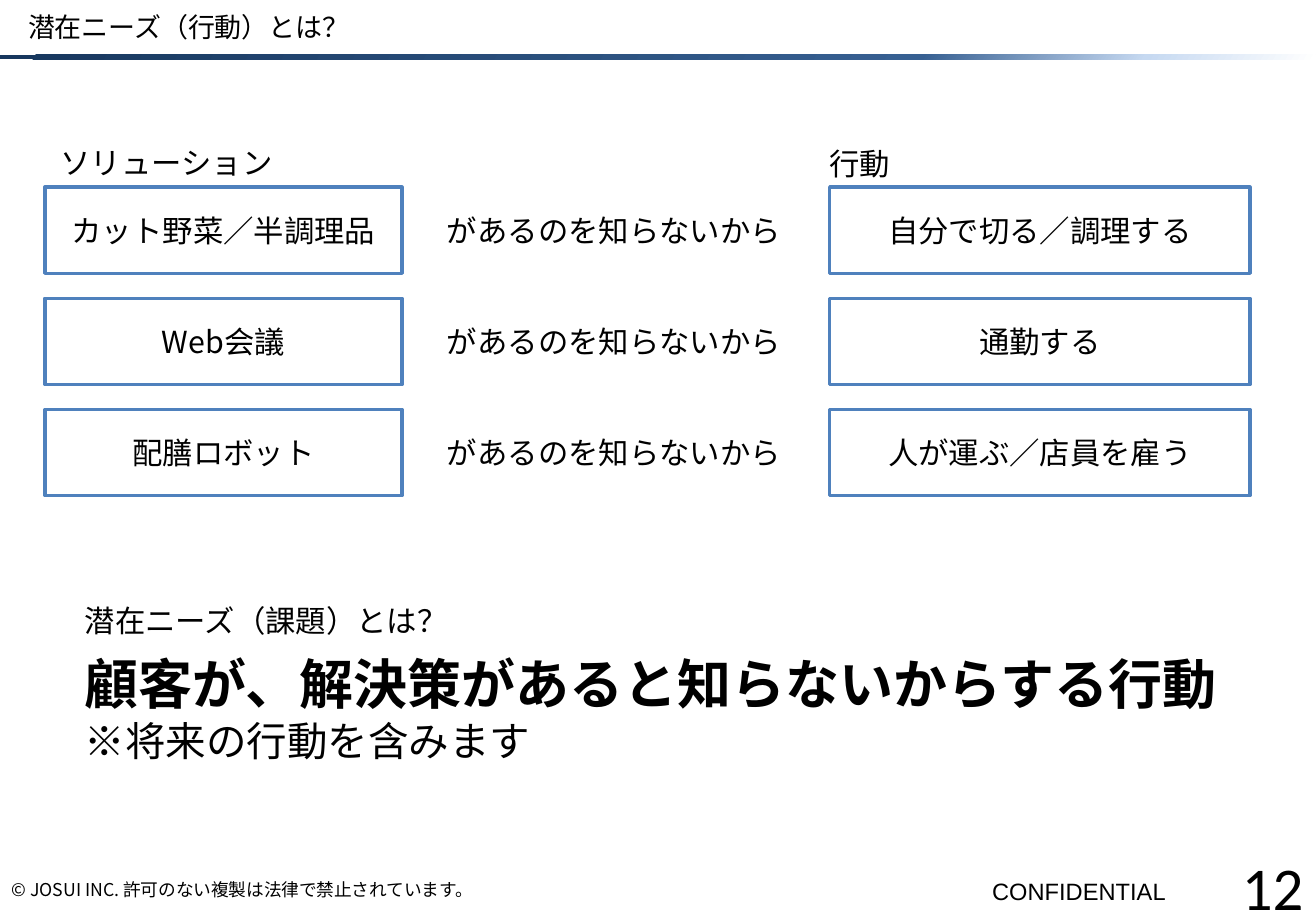
from copy import deepcopy
from lxml import etree
from pptx import Presentation
from pptx.dml.color import RGBColor
from pptx.enum.shapes import MSO_SHAPE
from pptx.enum.text import MSO_ANCHOR, MSO_AUTO_SIZE, PP_ALIGN
from pptx.oxml.ns import qn
from pptx.util import Pt

RECT = MSO_SHAPE.RECTANGLE
TOP, MIDDLE = MSO_ANCHOR.TOP, MSO_ANCHOR.MIDDLE
LEFT, CENTER, RIGHT = PP_ALIGN.LEFT, PP_ALIGN.CENTER, PP_ALIGN.RIGHT
NO_FIT = MSO_AUTO_SIZE.NONE

TITLE = "潜在ニーズ（行動）とは？"
HEADINGS = [("ソリューション", 28.8, 82.1, 141.8), ("行動", 484.6, 82.8, 51.1)]
REASON = "があるのを知らないから"
ROWS = [
    ("カット野菜／半調理品", "自分で切る／調理する"),
    ("Web会議", "通勤する"),
    ("配膳ロボット", "人が運ぶ／店員を雇う"),
]
QUESTION = "潜在ニーズ（課題）とは？"
ANSWER = "顧客が、解決策があると知らないからする行動"
NOTE = "※将来の行動を含みます"
COPYRIGHT = "© JOSUI INC. 許可のない複製は法律で禁止されています。"

FONT = "Noto Sans CJK JP"
COLORS = {"text": "000000", "box": "FFFFFF", "border": "4F81BD"}
BAR_STOPS = [(0, "17375E"), (70, "376092"), (87, "C6D9F1"), (100, "FFFFFF")]

SOLUTION_X, SOLUTION_W = 26.6, 211.7
REASON_X, REASON_W = 257.8, 214.6
ACTION_X, ACTION_W = 491.8, 249.1
ROW_TOP, ROW_STEP, ROW_H = 110.9, 65.9, 51.1
LINE_H = 28.8


def rgb(name):
    return RGBColor.from_string(COLORS[name])


def write(tf, text, size=18, font=FONT, bold=False, align=LEFT, anchor=TOP, wrap=False, new=False):
    tf.auto_size = NO_FIT
    tf.word_wrap = wrap
    tf.vertical_anchor = anchor
    p = tf.add_paragraph() if new else tf.paragraphs[0]
    p.alignment = align
    r = p.add_run()
    r.text = text
    r.font.size = Pt(size)
    r.font.bold = bold
    r.font.color.rgb = rgb("text")
    r.font.name = font
    etree.SubElement(r.font._element, qn("a:ea")).set("typeface", font)


def add_text(s, text, x, y, w, h=LINE_H, **fmt):
    tf = s.shapes.add_textbox(Pt(x), Pt(y), Pt(w), Pt(h)).text_frame
    write(tf, text, **fmt)
    return tf


def add_box(s, text, x, y, w):
    sp = s.shapes.add_shape(RECT, Pt(x), Pt(y), Pt(w), Pt(ROW_H))
    sp.shadow.inherit = False
    sp.fill.solid()
    sp.fill.fore_color.rgb = rgb("box")
    sp.line.color.rgb = rgb("border")
    sp.line.width = Pt(2)
    write(sp.text_frame, text, align=CENTER, anchor=MIDDLE, wrap=True)


def add_bar(s):
    bar = s.shapes.add_shape(RECT, 0, Pt(32.4), prs.slide_width, Pt(2.9))
    bar.shadow.inherit = False
    bar.line.fill.background()
    bar.fill.gradient()
    bar.fill.gradient_angle = 330
    stops = bar._element.spPr.find(".//" + qn("a:gsLst"))
    for extra in range(len(BAR_STOPS) - len(stops)):
        stops.append(deepcopy(stops[0]))
    for stop, (position, color) in zip(bar.fill.gradient_stops, BAR_STOPS):
        stop.position = position / 100
        stop.color.rgb = RGBColor.from_string(color)


prs = Presentation()
prs.slide_width, prs.slide_height = Pt(780), Pt(540)
s = prs.slides.add_slide(prs.slide_layouts[5])

add_bar(s)
title = s.shapes.title
title.left, title.top, title.width, title.height = Pt(9.4), Pt(0), Pt(665.3), Pt(31.7)
write(title.text_frame, TITLE, size=16, anchor=MIDDLE, wrap=True)

for heading, x, y, w in HEADINGS:
    add_text(s, heading, x, y, w)

for i, (solution, action) in enumerate(ROWS):
    y = ROW_TOP + i * ROW_STEP
    add_box(s, solution, SOLUTION_X, y, SOLUTION_W)
    add_text(s, REASON, REASON_X, y + (ROW_H - LINE_H) / 2, REASON_W)
    add_box(s, action, ACTION_X, y, ACTION_W)

add_text(s, QUESTION, 43.2, 353.5, 232.6)
tf = add_text(s, ANSWER, 43.2, 382.3, 693.4, 74.9, size=32, bold=True)
write(tf, NOTE, size=24, new=True)

add_text(s, COPYRIGHT, 0, 514.8, 702, 25.2, size=10.5, anchor=MIDDLE, wrap=True)
add_text(s, "CONFIDENTIAL", 581, 516.2, 121, 24.5, size=14, font="Arial")
add_text(s, "12", 681.1, 512.6, 98.6, 25.2, size=36, font="Calibri",
         align=RIGHT, anchor=MIDDLE, wrap=True)

prs.save("out.pptx")
